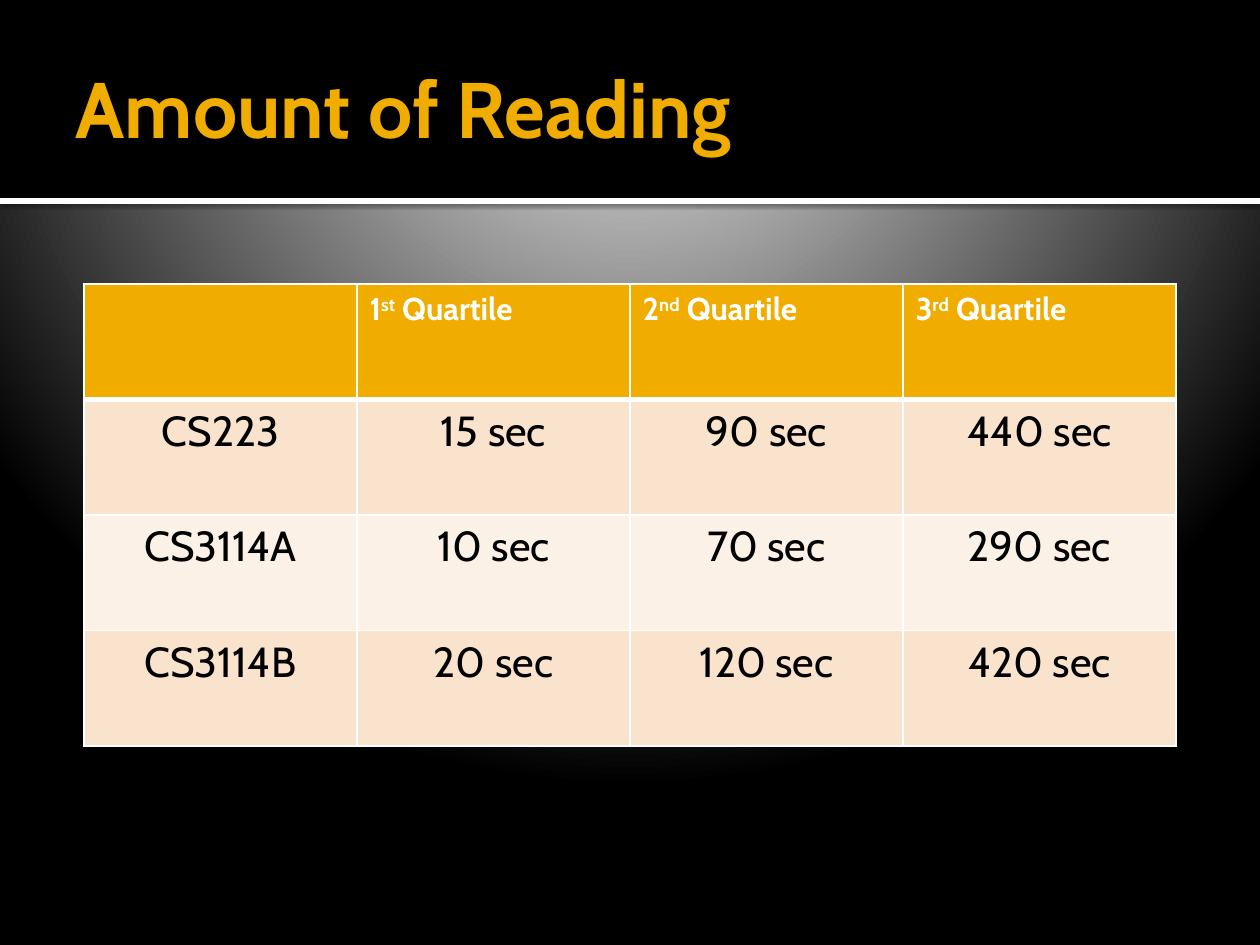
from lxml.etree import fromstring
from pptx import Presentation
from pptx.dml.color import RGBColor
from pptx.enum.shapes import MSO_SHAPE
from pptx.enum.text import MSO_ANCHOR, PP_ALIGN
from pptx.util import Pt

TITLE = "Amount of Reading"
ORDINALS = [("1", "st"), ("2", "nd"), ("3", "rd")]
ROWS = [
    ("CS223", "15 sec", "90 sec", "440 sec"),
    ("CS3114A", "10 sec", "70 sec", "290 sec"),
    ("CS3114B", "20 sec", "120 sec", "420 sec"),
]
FONT = "Cabin"
GOLD, WHITE, BLACK = "F0AD00", "FFFFFF", "000000"
BANDS = ["F9E3CC", "FCF1E7"]
STOPS = [(0, "C0C0C0"), (12, "C0C0C0"), (20, "BEBEBE"), (100, BLACK)]
NS = 'xmlns:a="http://schemas.openxmlformats.org/drawingml/2006/main"'


def px(n):
    return round(n * 914400 / 126)


def rgb(color):
    return RGBColor.from_string(color)


def add_run(p, text, size, color, bold=False, raised=False):
    r = p.add_run()
    r.text = text
    for name, value in {"name": FONT, "size": Pt(size), "bold": bold}.items():
        setattr(r.font, name, value)
    r.font.color.rgb = rgb(color)
    if raised:
        r.font._element.set("baseline", "30000")


def add_band(s, top, height, color):
    sp = s.shapes.add_shape(MSO_SHAPE.RECTANGLE, 0, px(top), px(1260), px(height))
    sp.shadow.inherit = False
    sp.fill.solid()
    sp.fill.fore_color.rgb = rgb(color)
    sp.line.fill.background()
    return sp


def style_cell(cell, color, top, bottom):
    tcPr = cell._tc.get_or_add_tcPr()
    for side, width in {"L": 1, "R": 1, "T": top, "B": bottom}.items():
        tcPr.append(fromstring(
            f'<a:ln{side} {NS} w="{Pt(width)}"><a:solidFill>'
            f'<a:srgbClr val="{WHITE}"/></a:solidFill></a:ln{side}>'))
    cell.fill.solid()
    cell.fill.fore_color.rgb = rgb(color)


prs = Presentation()
prs.slide_width, prs.slide_height = px(1260), px(945)
s = prs.slides.add_slide(prs.slide_layouts[5])

# Background: a glow from above
s.background.fill.gradient()
grad = s.element.xpath(".//p:bgPr/a:gradFill")[0]
stops = "".join(f'<a:gs pos="{pos * 1000}"><a:srgbClr val="{color}"/></a:gs>'
                for pos, color in STOPS)
grad.getparent().replace(grad, fromstring(
    f'<a:gradFill {NS} rotWithShape="1"><a:gsLst>{stops}</a:gsLst><a:path path="circle">'
    '<a:fillToRect l="10000" t="-25000" r="10000" b="125000"/></a:path></a:gradFill>'))

# Header band and the white rule under it
rule = add_band(s, 198, 6, WHITE)
rule._element.spPr.find("{*}effectLst").append(fromstring(
    f'<a:outerShdw {NS} blurRad="{Pt(2.5)}" dist="{Pt(0.8)}" dir="5400000" rotWithShape="0">'
    f'<a:srgbClr val="{BLACK}"><a:alpha val="60000"/></a:srgbClr></a:outerShdw>'))
add_band(s, 0, 198, BLACK)

# Title, in front of the band
title = s.shapes.title
title.left, title.top, title.width, title.height = map(px, (63, 21, 1134, 173))
title.element.getparent().append(title.element)
tf = title.text_frame
tf.vertical_anchor = MSO_ANCHOR.MIDDLE
tf.margin_right = px(6)
tf.paragraphs[0].alignment = PP_ALIGN.LEFT
add_run(tf.paragraphs[0], TITLE, 45, GOLD, bold=True)

# Table
table = s.shapes.add_table(len(ROWS) + 1, len(ROWS[0]),
                           px(84), px(284), px(1092), px(462)).table
for col in range(len(ROWS[0])):
    style_cell(table.cell(0, col), GOLD, 1, 3)
for col, (number, suffix) in enumerate(ORDINALS, 1):
    p = table.cell(0, col).text_frame.paragraphs[0]
    add_run(p, number, 18, WHITE, bold=True)
    add_run(p, suffix, 18, WHITE, bold=True, raised=True)
    add_run(p, " Quartile", 18, WHITE, bold=True)
for row, values in enumerate(ROWS, 1):
    for col, value in enumerate(values):
        cell = table.cell(row, col)
        style_cell(cell, BANDS[(row - 1) % 2], 3 if row == 1 else 1, 1)
        p = cell.text_frame.paragraphs[0]
        p.alignment = PP_ALIGN.CENTER
        add_run(p, value, 24, BLACK)

prs.save("out.pptx")
